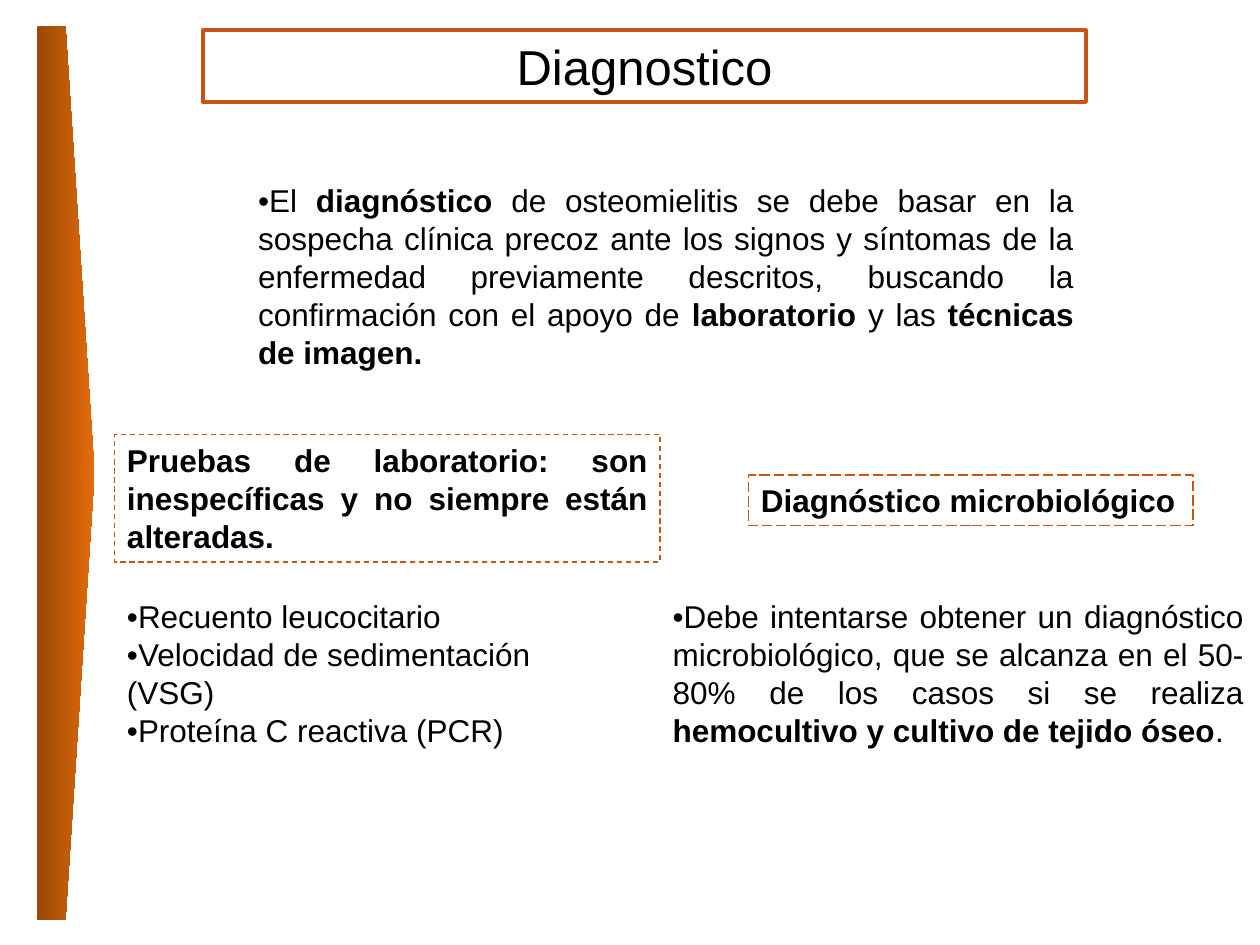
"""Build the slide on the diagnosis of osteomyelitis."""
from pptx import Presentation
from pptx.dml.color import RGBColor
from pptx.enum.dml import MSO_LINE
from pptx.enum.shapes import MSO_SHAPE
from pptx.enum.text import MSO_ANCHOR, MSO_AUTO_SIZE, PP_ALIGN
from pptx.util import Inches, Pt

LEFT, CENTER, JUSTIFY = PP_ALIGN.LEFT, PP_ALIGN.CENTER, PP_ALIGN.JUSTIFY
DASH, LONG_DASH, SOLID = MSO_LINE.DASH, MSO_LINE.LONG_DASH, MSO_LINE.SOLID
COLORS = {"text": "000000", "border": "C95515", "dark": "984807", "light": "E46C0A"}


def add_text(sp, paras, align, size=18, wrap=True):
    tf = sp.text_frame
    tf.word_wrap = wrap
    tf.auto_size = MSO_AUTO_SIZE.SHAPE_TO_FIT_TEXT
    tf.vertical_anchor = MSO_ANCHOR.TOP
    for i, runs in enumerate(paras):
        p = tf.paragraphs[0] if i == 0 else tf.add_paragraph()
        p.alignment = align
        for text, bold in runs:
            r = p.add_run()
            r.text = text
            r.font.name = "Arial"
            r.font.size = Pt(size)
            r.font.bold = bold
            r.font.color.rgb = RGBColor.from_string(COLORS["text"])


prs = Presentation()
prs.slide_width, prs.slide_height = Inches(10), Inches(7.5)
s = prs.slides.add_slide(prs.slide_layouts[6])

band = s.shapes.add_shape(MSO_SHAPE.PENTAGON, Inches(0.29), Inches(0.21), Inches(0.46), Inches(7.09))
band.shadow.inherit = False
band.line.fill.background()
band.fill.gradient()
band.fill.gradient_angle = 0
for stop, name, pos in zip(band.fill.gradient_stops, ("dark", "light"), (0, 1)):
    stop.color.rgb = RGBColor.from_string(COLORS[name])
    stop.position = pos

framed = [
    ((1.61, 0.24, 7.01, 0.57), "Diagnostico", False, CENTER, 28, True, 2, SOLID),
    ((0.91, 3.45, 4.33, 1.01),
     "Pruebas de laboratorio: son inespecíficas y no siempre están alteradas.",
     True, JUSTIFY, 18, True, 0.75, DASH),
    ((5.94, 3.77, 3.53, 0.4), "Diagnóstico microbiológico",
     True, LEFT, 18, False, 0.75, LONG_DASH),
]
for box, text, bold, align, size, wrap, width, dash in framed:
    sp = s.shapes.add_shape(MSO_SHAPE.RECTANGLE, *map(Inches, box))
    sp.shadow.inherit = False
    sp.fill.background()
    sp.line.color.rgb = RGBColor.from_string(COLORS["border"])
    sp.line.width = Pt(width)
    sp.line.dash_style = dash
    add_text(sp, [[(text, bold)]], align, size, wrap)

tests = ["•Recuento leucocitario", "•Velocidad de sedimentación", "(VSG)",
         "•Proteína C reactiva (PCR)"]
plain = [
    ((1.95, 1.39, 6.67, 1.62), JUSTIFY, [[
        ("•El ", False),
        ("diagnóstico", True),
        (" de osteomielitis se debe basar en la sospecha clínica precoz ante los signos "
         "y síntomas de la enfermedad previamente descritos, buscando la confirmación "
         "con el apoyo de ", False),
        ("laboratorio ", True),
        ("y las ", False),
        ("técnicas de imagen.", True)]]),
    ((0.91, 4.69, 5, 1.31), LEFT, [[(test, False)] for test in tests]),
    ((5.24, 4.69, 4.73, 1.31), JUSTIFY, [[
        ("•Debe intentarse obtener un diagnóstico microbiológico, que se alcanza en el "
         "50-80% de los casos si se realiza ", False),
        ("hemocultivo y cultivo de tejido óseo", True),
        (".", False)]]),
]
for box, align, paras in plain:
    add_text(s.shapes.add_textbox(*map(Inches, box)), paras, align)

prs.save("out.pptx")
